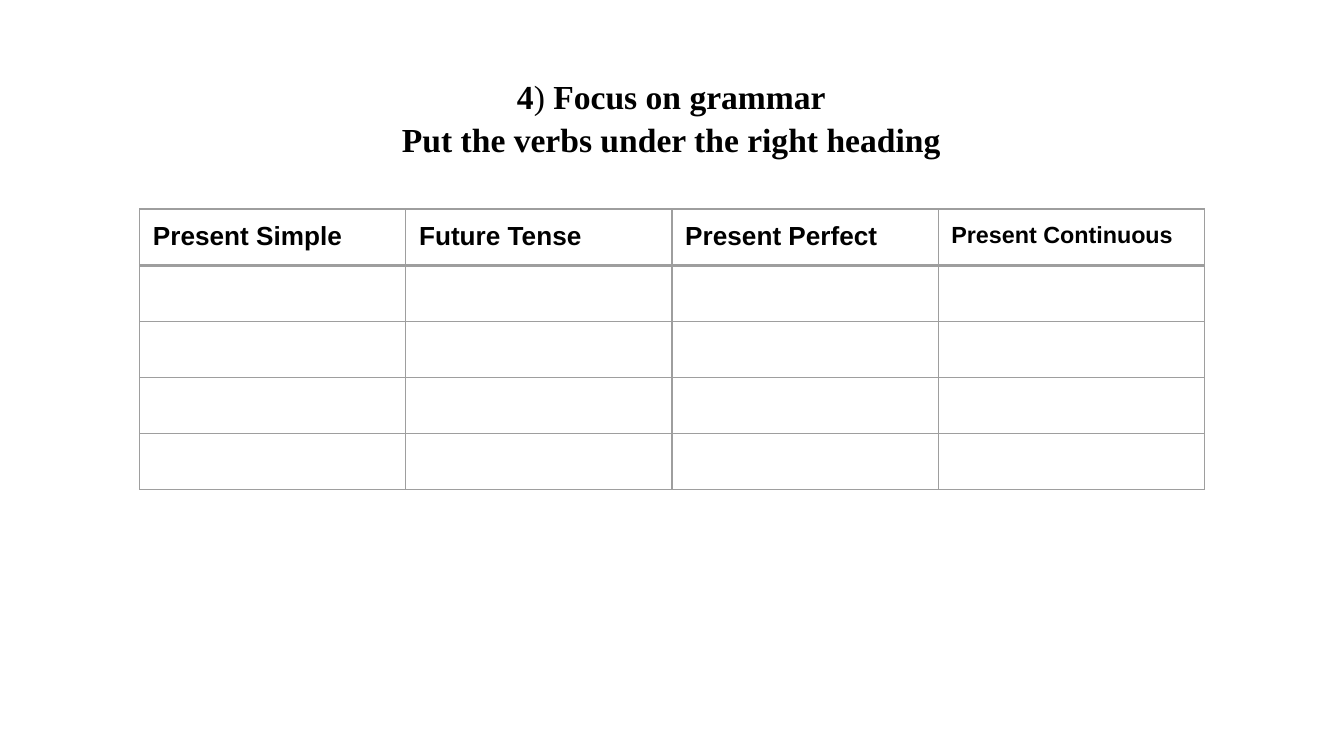
import pptx
import pptx.dml.color
import pptx.enum.text
import pptx.oxml
import pptx.util
from pptx.util import Cm


def color(code):
    return pptx.dml.color.RGBColor.from_string(code)


class Sheet:
    ink = "000000"
    line = "9E9E9E"
    pad = Cm(0.25)
    left = Cm(2.64)
    col = Cm(5.03)
    row = Cm(1.06)

    def __init__(self, slide):
        self.slide = slide

    def style(self, font, name, size):
        font.name = name
        font.size = pptx.util.Pt(size)
        font.color.rgb = color(self.ink)

    def title(self, left, top, width, height, lines, size=18):
        box = self.slide.shapes.add_textbox(left, top, width, height)
        frame = box.text_frame
        frame.word_wrap = True
        frame.margin_left = frame.margin_right = self.pad
        frame.margin_top = frame.margin_bottom = self.pad
        for i, parts in enumerate(lines):
            para = frame.add_paragraph() if i else frame.paragraphs[0]
            para.alignment = pptx.enum.text.PP_ALIGN.CENTER
            para.line_spacing = 1.06
            for text, bold in parts:
                run = para.add_run()
                run.text = text
                self.style(run.font, "Times New Roman", size)
                run.font.bold = bold

    def border(self, cell):
        props = cell._tc.get_or_add_tcPr()
        for i, side in enumerate(("lnL", "lnR", "lnT", "lnB")):
            props.insert(i, pptx.oxml.parse_xml(
                f'<a:{side} xmlns:a="http://schemas.openxmlformats.org/'
                f'drawingml/2006/main" w="{pptx.util.Pt(0.75)}"><a:solidFill>'
                f'<a:srgbClr val="{self.line}"/></a:solidFill></a:{side}>'))

    def head(self, cell, text, size):
        cell.margin_left = cell.margin_right = self.pad
        cell.margin_top = cell.margin_bottom = self.pad
        para = cell.text_frame.paragraphs[0]
        para.text = text
        self.style(para.font, "Arial", size)
        para.font.bold = True

    def table(self, top, rows, cols):
        grid = self.slide.shapes.add_table(
            rows, cols, self.left, top, self.col * cols, self.row * rows).table
        grid.first_row = grid.horz_banding = False
        for line in grid.rows:
            line.height = self.row
        for cell in grid.iter_cells():
            cell.fill.background()
            self.border(cell)
        return grid


def main():
    deck = pptx.Presentation()
    deck.slide_width, deck.slide_height = Cm(25.4), Cm(14.29)
    sheet = Sheet(deck.slides.add_slide(deck.slide_layouts[6]))

    # Title
    sheet.title(Cm(5.59), Cm(1.14), Cm(14.2), Cm(1.93), [
        [("4", True), (") ", False), ("Focus on grammar", True)],
        [("Put the verbs under the right heading", True)],
    ])

    # Empty rows for the answers
    heads = [("Present Simple", 14), ("Future Tense", 14),
             ("Present Perfect", 14), ("Present Continuous", 12.5)]
    sheet.table(Cm(5.01), 4, len(heads))

    # Tense headings
    grid = sheet.table(Cm(3.95), 1, len(heads))
    for i, (text, size) in enumerate(heads):
        sheet.head(grid.cell(0, i), text, size)

    deck.save("out.pptx")


if __name__ == "__main__":
    main()
